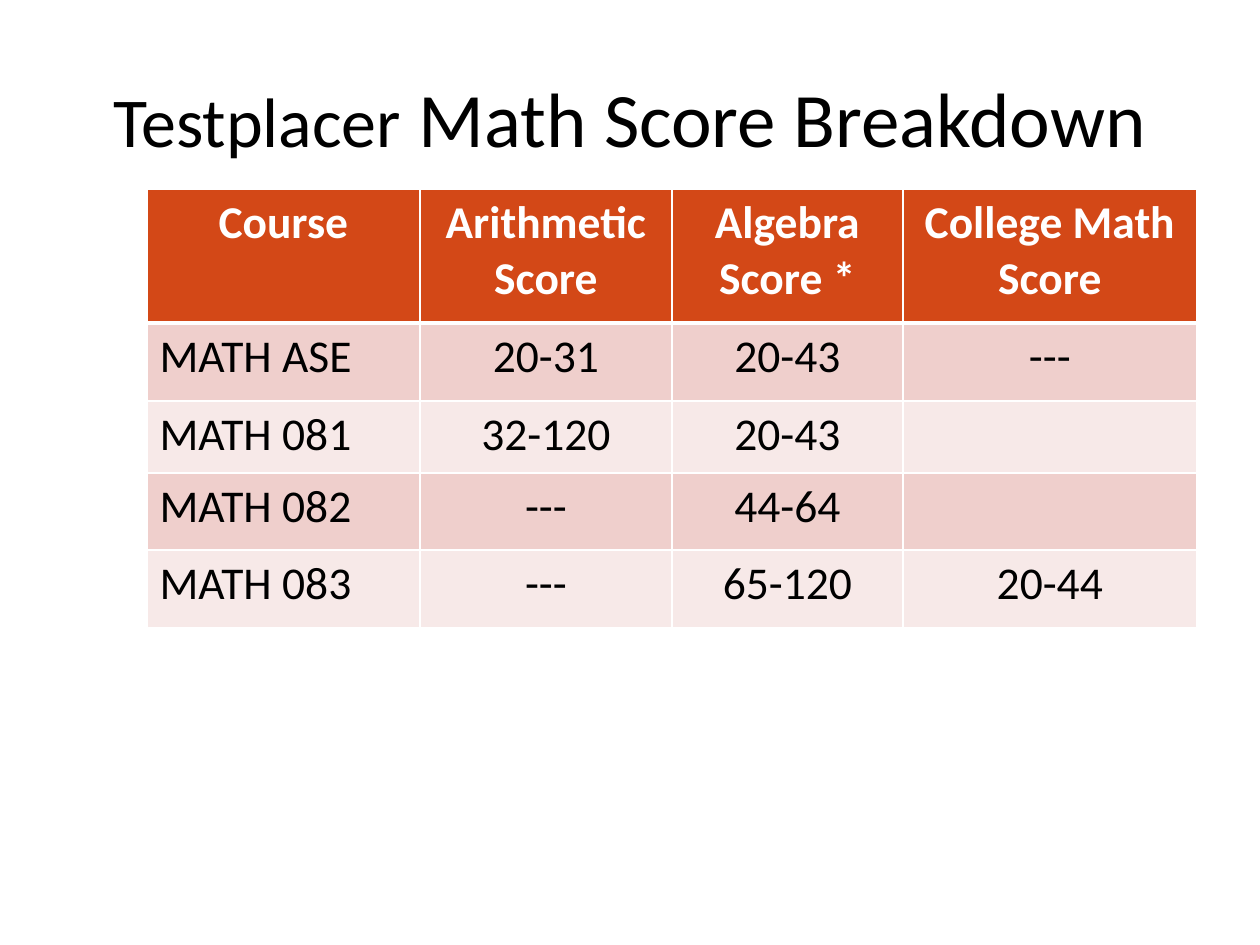
from dataclasses import dataclass

from lxml import etree
from pptx import Presentation
from pptx import util as u
from pptx.dml.color import RGBColor
from pptx.enum import text
from pptx.oxml.ns import qn

EMU_PER_PX = 914400 / 126
FONT = "Calibri"
COLORS = {
    "header": "D34817",
    "odd_row": "EFCFCC",
    "even_row": "F7E9E8",
    "white": "FFFFFF",
    "black": "000000",
}
COLUMN_WIDTHS = (273, 252, 231, 294)
HEADERS = ("Course", "Arithmetic Score", "Algebra Score *", "College Math Score")


@dataclass(frozen=True)
class ScoreRow:
    height: int
    values: tuple[str, ...]


SCORE_ROWS = (
    ScoreRow(134, HEADERS),
    ScoreRow(78, ("MATH ASE", "20-31", "20-43", "---")),
    ScoreRow(72, ("MATH 081", "32-120", "20-43", "")),
    ScoreRow(77, ("MATH 082", "---", "44-64", "")),
    ScoreRow(78, ("MATH 083", "---", "65-120", "20-44")),
)


def px(length: int) -> u.Emu:
    return u.Emu(round(length * EMU_PER_PX))


def rgb(name: str) -> RGBColor:
    return RGBColor.from_string(COLORS[name])


def add_run(paragraph, words: str, size: int, color: str, bold: bool = False) -> None:
    run = paragraph.add_run()
    run.text = words
    run.font.name = FONT
    run.font.size = u.Pt(size)
    run.font.bold = bold
    run.font.color.rgb = rgb(color)


def add_borders(cell, top: int, bottom: int) -> None:
    """Draw white cell borders; top and bottom widths are in points."""
    properties = cell._tc.get_or_add_tcPr()
    sides = (("lnL", 1), ("lnR", 1), ("lnT", top), ("lnB", bottom))
    for position, (side, width) in enumerate(sides):
        line = etree.Element(qn(f"a:{side}"), w=str(u.Pt(width)))
        fill = etree.SubElement(line, qn("a:solidFill"))
        etree.SubElement(fill, qn("a:srgbClr"), val=COLORS["white"])
        properties.insert(position, line)


def add_title(slide) -> None:
    title = slide.shapes.add_textbox(px(63), px(38), px(1134), px(157))
    frame = title.text_frame
    frame.word_wrap = True
    frame.vertical_anchor = text.MSO_ANCHOR.MIDDLE
    heading = frame.paragraphs[0]
    heading.alignment = text.PP_ALIGN.CENTER
    add_run(heading, "Testplacer", 40, "black")
    add_run(heading, " Math Score Breakdown", 44, "black")


def fill_cell(cell, words: str, row: int, column: int) -> None:
    is_header = row == 0
    cell.fill.solid()
    band = "odd_row" if row % 2 else "even_row"
    cell.fill.fore_color.rgb = rgb("header" if is_header else band)
    add_borders(cell, top=3 if row == 1 else 1, bottom=3 if is_header else 1)
    if words:
        paragraph = cell.text_frame.paragraphs[0]
        if is_header or column > 0:
            paragraph.alignment = text.PP_ALIGN.CENTER
        add_run(paragraph, words, 26, "white" if is_header else "black", is_header)


def add_score_table(slide) -> None:
    total_height = sum(row.height for row in SCORE_ROWS)
    scores = slide.shapes.add_table(
        len(SCORE_ROWS), len(COLUMN_WIDTHS),
        px(147), px(189), px(sum(COLUMN_WIDTHS)), px(total_height),
    ).table
    for column, width in zip(scores.columns, COLUMN_WIDTHS):
        column.width = px(width)
    for r, score_row in enumerate(SCORE_ROWS):
        scores.rows[r].height = px(score_row.height)
        for c, words in enumerate(score_row.values):
            fill_cell(scores.cell(r, c), words, r, c)


def main() -> None:
    deck = Presentation()
    deck.slide_width, deck.slide_height = px(1260), px(945)
    slide = deck.slides.add_slide(deck.slide_layouts[6])
    add_title(slide)
    add_score_table(slide)
    deck.save("out.pptx")


if __name__ == "__main__":
    main()
